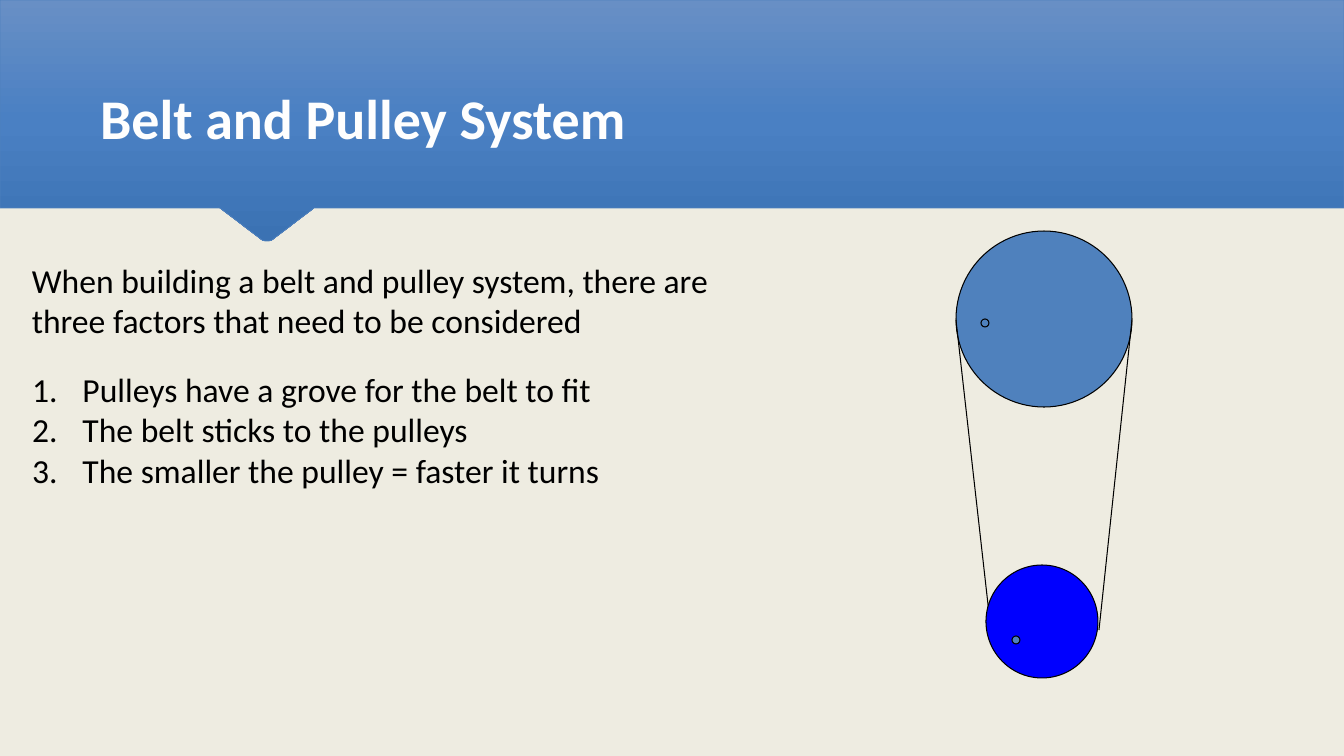
from copy import deepcopy

from lxml.etree import SubElement
from pptx import Presentation
from pptx.dml.color import RGBColor
from pptx.enum.shapes import MSO_CONNECTOR, MSO_SHAPE
from pptx.enum.text import MSO_ANCHOR, MSO_AUTO_SIZE, PP_ALIGN
from pptx.oxml import parse_xml
from pptx.oxml.ns import nsdecls, qn
from pptx.util import Pt

TITLE = "Belt and Pulley System"
INTRO = ("When building a belt and pulley system, there are three factors "
         "that need to be considered")
FACTORS = [
    "Pulleys have a grove for the belt to fit",
    "The belt sticks to the pulleys",
    "The smaller the pulley = faster it turns",
]
COLORS = {
    "paper": "EEECE1", "title": "FEFEFE", "ink": "000000",
    "steel": "4F81BD", "blue": "0000FF",
    "top": "688FC5", "middle": "4A80C3", "bottom": "3B72B3",
}
BANNER = [(1344, 0), (0, 0), (0, 208), (220, 208), (262, 240), (265, 241),
          (269, 241), (272, 240), (314, 208), (1344, 208)]
GRADIENT = [(0, "top"), (0.5, "middle"), (1, "bottom")]
PULLEYS = [
    {"wheel": (956, 231, 176, 176), "pin": (981, 319, 8, 8), "color": "steel"},
    {"wheel": (986, 565, 112, 113), "pin": (1012, 636, 8, 8), "color": "blue"},
]
BELTS = [(990, 622, 956, 320), (1099, 630, 1132, 320)]
BOXES = {
    "title": (90, 49, 1165, 107),
    "intro": (22, 255, 744, 92),
    "factors": (22, 364, 800, 132),
}
TITLE_FONT = {"name": "Calibri", "size": Pt(40), "bold": True}
BODY_FONT = {"name": "Calibri", "size": Pt(24), "bold": False}
PX = 914400 / 100.8
INDENT = 457200


def px(values):
    return [round(v * PX) for v in values]


def rgb(name):
    return RGBColor.from_string(COLORS[name])


def outline(line, color, width):
    line.color.rgb = rgb(color)
    line.width = Pt(width)


def place(sp, box):
    sp.left, sp.top, sp.width, sp.height = px(box)


def write(sp, lines, font, color, anchor=MSO_ANCHOR.TOP):
    tf = sp.text_frame
    frame = {"word_wrap": True, "auto_size": MSO_AUTO_SIZE.NONE,
             "vertical_anchor": anchor}
    for key, value in frame.items():
        setattr(tf, key, value)
    for i, text in enumerate(lines):
        p = tf.add_paragraph() if i else tf.paragraphs[0]
        p.alignment, p.space_before = PP_ALIGN.LEFT, Pt(0)
        r = p.add_run()
        r.text = text
        for key, value in font.items():
            setattr(r.font, key, value)
        r.font.color.rgb = rgb(color)
    return tf.paragraphs


def add_banner(shapes):
    builder = shapes.build_freeform(*BANNER[0], scale=PX)
    builder.add_line_segments(BANNER[1:], close=True)
    sp = builder.convert_to_shape()
    sp.shadow.inherit = False
    sp.fill.gradient()
    sp.fill.gradient_angle = 270
    stops = sp._element.xpath(".//a:gsLst")[0]
    stops.append(deepcopy(stops[-1]))
    for stop, (position, color) in zip(sp.fill.gradient_stops, GRADIENT):
        stop.position = position
        stop.color.rgb = rgb(color)
    outline(sp.line, "steel", 0.5)


def add_pulley(shapes, pulley):
    group = shapes.add_group_shape()
    for part, color in (("wheel", pulley["color"]), ("pin", "steel")):
        sp = group.shapes.add_shape(MSO_SHAPE.OVAL, *px(pulley[part]))
        sp.shadow.inherit = False
        sp.fill.solid()
        sp.fill.fore_color.rgb = rgb(color)
        outline(sp.line, "ink", 0.75)


def add_belt(shapes, ends):
    line = shapes.add_connector(MSO_CONNECTOR.STRAIGHT, *px(ends))
    outline(line.line, "ink", 0.75)
    SubElement(line._element.spPr, qn("a:effectLst"))


def add_text_shadow(r):
    effect = parse_xml(
        f'<a:effectLst {nsdecls("a")}><a:outerShdw blurRad="38100" '
        'dist="25400" dir="2700000"><a:srgbClr val="000000">'
        '<a:alpha val="50000"/></a:srgbClr></a:outerShdw></a:effectLst>')
    r.font._element.find(qn("a:solidFill")).addnext(effect)


def number(paragraphs):
    for p in paragraphs:
        pPr = p._p.get_or_add_pPr()
        pPr.set("marL", str(INDENT))
        pPr.set("indent", str(-INDENT))
        SubElement(pPr, qn("a:buFont"), typeface="+mj-lt")
        SubElement(pPr, qn("a:buAutoNum"), type="arabicPeriod")


def main():
    prs = Presentation()
    prs.slide_width, prs.slide_height = px((1344, 756))
    slide = prs.slides.add_slide(prs.slide_layouts[1])
    slide.background.fill.solid()
    slide.background.fill.fore_color.rgb = rgb("paper")
    shapes = slide.shapes
    title, factors = shapes.title, slide.placeholders[1]

    add_banner(shapes)
    shapes._spTree.append(title._element)
    place(title, BOXES["title"])
    heading = write(title, [TITLE], TITLE_FONT, "title", MSO_ANCHOR.BOTTOM)
    add_text_shadow(heading[0].runs[0])

    large, small = PULLEYS
    add_pulley(shapes, large)
    for ends in BELTS:
        add_belt(shapes, ends)
    add_pulley(shapes, small)

    intro = shapes.add_textbox(*px(BOXES["intro"]))
    write(intro, [INTRO], BODY_FONT, "ink")
    place(factors, BOXES["factors"])
    number(write(factors, FACTORS, BODY_FONT, "ink"))
    prs.save("out.pptx")


if __name__ == "__main__":
    main()
